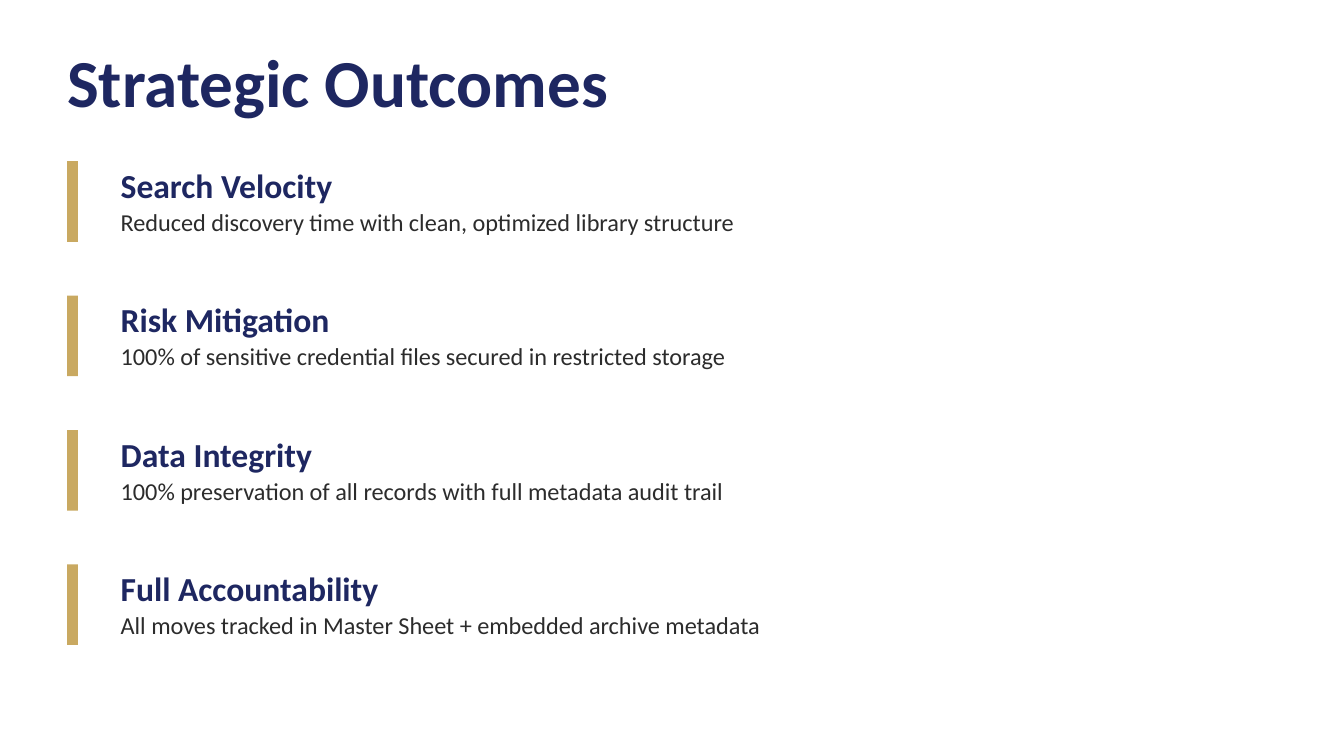
from dataclasses import dataclass

from pptx import Presentation
from pptx.dml.color import RGBColor
from pptx.enum.shapes import MSO_SHAPE
from pptx.enum.text import MSO_ANCHOR
from pptx.util import Pt


@dataclass(frozen=True)
class Theme:
    font: str = "Calibri"
    background: str = "FFFFFF"
    navy: str = "1E2761"
    gold: str = "C9A961"
    ink: str = "2C2C2C"
    title_size: float = 36
    heading_size: float = 18
    detail_size: float = 13


THEME = Theme()
OUTCOMES = [
    ("Search Velocity", "Reduced discovery time with clean, optimized library structure"),
    ("Risk Mitigation", "100% of sensitive credential files secured in restricted storage"),
    ("Data Integrity", "100% preservation of all records with full metadata audit trail"),
    ("Full Accountability", "All moves tracked in Master Sheet + embedded archive metadata"),
]


def add_text(slide, box, text, size, color, bold=False, inset=None):
    """Add one line, centred vertically; inset replaces the default margins."""
    frame = slide.shapes.add_textbox(*map(Pt, box)).text_frame
    frame.word_wrap = True
    frame.vertical_anchor = MSO_ANCHOR.MIDDLE
    if inset is not None:
        for side in ("left", "top", "right", "bottom"):
            setattr(frame, f"margin_{side}", Pt(inset))
    run = frame.paragraphs[0].add_run()
    run.text = text
    font_format = {"name": THEME.font, "size": Pt(size), "bold": bold}
    for attribute, value in font_format.items():
        setattr(run.font, attribute, value)
    run.font.color.rgb = RGBColor.from_string(color)


def add_title(slide, box, title):
    add_text(slide, box, title, THEME.title_size, THEME.navy, bold=True, inset=0)


def add_outcome(slide, box, heading, detail):
    """Place a gold bar at the left of the box, with heading and detail beside it."""
    left, top, width, height = box
    bar = slide.shapes.add_shape(
        MSO_SHAPE.RECTANGLE, Pt(left), Pt(top), Pt(5.76), Pt(height)
    )
    bar.shadow.inherit = False
    bar.fill.solid()
    bar.fill.fore_color.rgb = RGBColor.from_string(THEME.gold)
    bar.line.fill.background()

    indent = 21.6
    text_left, text_width = left + indent, width - indent
    add_text(slide, (text_left, top + 3.6, text_width, 18), heading,
             THEME.heading_size, THEME.navy, bold=True)
    add_text(slide, (text_left, top + 25.2, text_width, 14.4), detail,
             THEME.detail_size, THEME.ink)


def add_outcome_list(slide, box, outcomes, gap):
    left, top, width, height = box
    row_height = (height - gap * (len(outcomes) - 1)) / len(outcomes)
    for index, (heading, detail) in enumerate(outcomes):
        row_top = top + index * (row_height + gap)
        add_outcome(slide, (left, row_top, width, row_height), heading, detail)


def main():
    presentation = Presentation()
    presentation.slide_width, presentation.slide_height = Pt(720), Pt(405)
    slide = presentation.slides.add_slide(presentation.slide_layouts[6])
    slide.background.fill.solid()
    slide.background.fill.fore_color.rgb = RGBColor.from_string(THEME.background)
    add_title(slide, (36, 21.6, 648, 43.2), "Strategic Outcomes")
    add_outcome_list(slide, (36, 86.4, 633.6, 259.2), OUTCOMES, gap=28.8)
    presentation.save("out.pptx")


if __name__ == "__main__":
    main()
